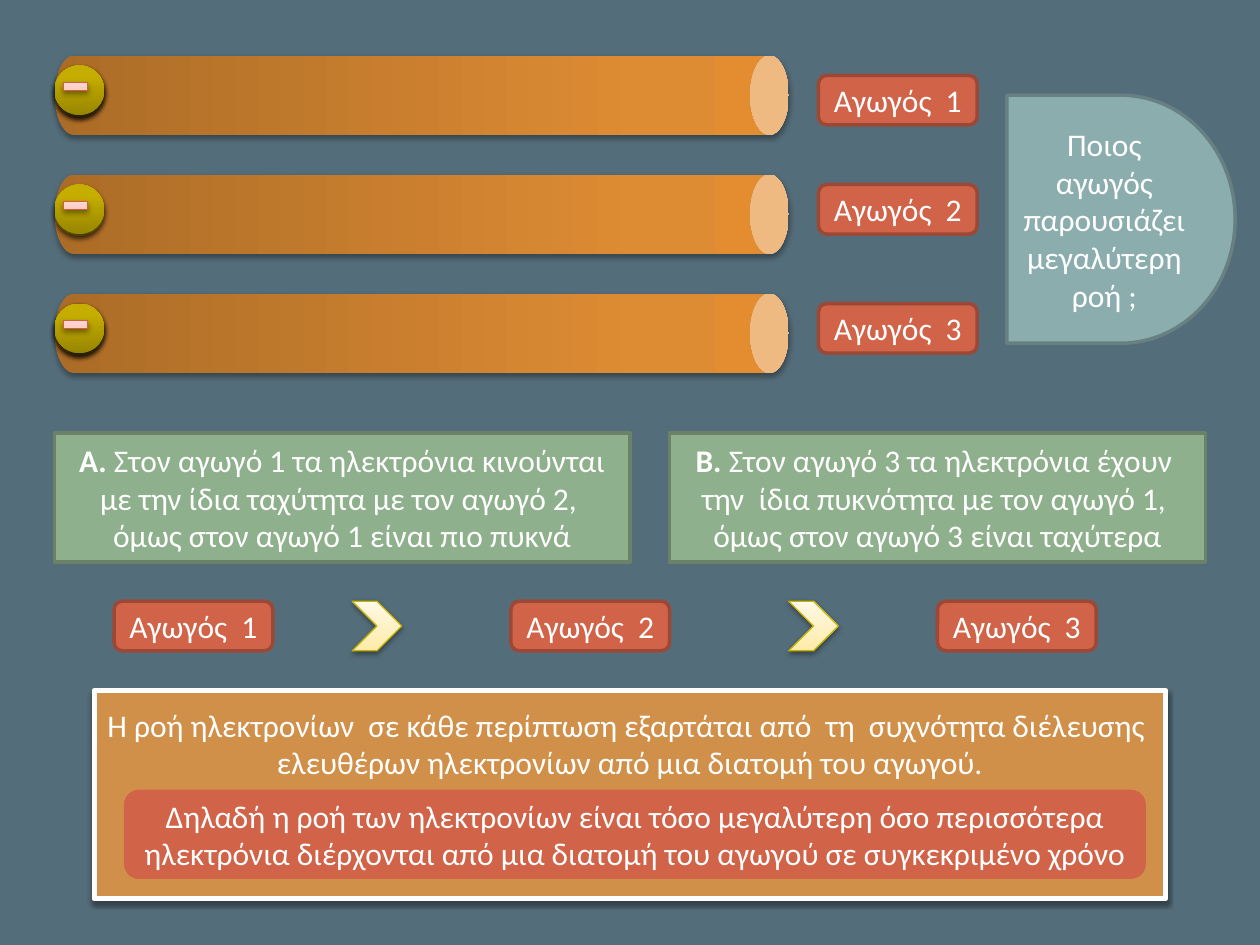
from dataclasses import dataclass
from typing import Optional

from lxml.etree import SubElement
from pptx import Presentation
from pptx.dml.color import RGBColor
from pptx.enum.shapes import MSO_SHAPE as Geometry
from pptx.enum.text import MSO_ANCHOR as Anchor, PP_ALIGN as Align
from pptx.oxml.ns import qn
from pptx.util import Inches, Pt

COLUMNS, ROWS = 25.4, 19.05
SLIDE_WIDTH, SLIDE_HEIGHT = Inches(10), Inches(7.5)
ROW_PITCH = 2.4
WHITE = "FFFFFF"


@dataclass(frozen=True)
class Cell:
    col: float
    row: float
    cols: float
    rows: float


@dataclass(frozen=True)
class Shadow:
    opacity: int
    distance: float


@dataclass(frozen=True)
class Style:
    fill: Optional[str] = None
    stops: tuple[tuple[int, str], ...] = ()
    line: Optional[str] = None
    line_width: float = 2
    shadow: Optional[Shadow] = None


@dataclass(frozen=True)
class Conductor:
    name: str
    electrons: int
    label_row: float
    order_col: float


@dataclass(frozen=True)
class Statement:
    cell: Cell
    letter: str
    wording: str


DEEP, SOFT = Shadow(35, 1.8), Shadow(38, 1.6)
COPPER = Style(stops=((0, "AB6C27"), (80, "DE8C33"), (100, "E38D30")), shadow=DEEP)
ELECTRON = Style(stops=((0, "988600"), (80, "C6AE00"), (100, "C7AF00")), shadow=DEEP)
CHARGE = Style(stops=((0, "FFB5AC"), (35, "FFCAC4"), (100, "FFEBE8")),
               line="D05F44", line_width=0.75, shadow=SOFT)
ARROW = Style(stops=((0, "FFEBA5"), (35, "FFF0BF"), (100, "FFF9E7")),
              line="C8B000", line_width=0.75, shadow=SOFT)
LABEL = Style(fill="D16349", line="9B4936")
QUESTION = Style(fill="8CADAE", line="688081")
ANSWER = Style(fill="8FB08C", line="6A8268")
PANEL = Style(fill="D19049", line=WHITE, line_width=3, shadow=SOFT)
SUMMARY = Style(fill="D16349")

CONDUCTORS = (
    Conductor("Αγωγός  1", 5, 1.52, 2.3),
    Conductor("Αγωγός  2", 3, 3.72, 10.3),
    Conductor("Αγωγός  3", 5, 6.12, 18.9),
)
STATEMENTS = (
    Statement(Cell(1.1, 8.73, 11.6, 2.6), "Α.",
              " Στον αγωγό 1 τα ηλεκτρόνια κινούνται με την ίδια ταχύτητα "
              "με τον αγωγό 2,  όμως στον αγωγό 1 είναι πιο πυκνά"),
    Statement(Cell(13.5, 8.73, 10.8, 2.6), "Β.",
              " Στον αγωγό 3 τα ηλεκτρόνια έχουν  την  ίδια πυκνότητα "
              "με τον αγωγό 1,  όμως στον αγωγό 3 είναι ταχύτερα"),
)
ORDER_ROW = 12.12
ARROW_COLS = (7.1, 15.9)


def x(cols: float) -> int:
    return round(SLIDE_WIDTH * cols / COLUMNS)


def y(rows: float) -> int:
    return round(SLIDE_HEIGHT * rows / ROWS)


def paint(colour, hex_value: str) -> None:
    colour.rgb = RGBColor.from_string(hex_value)


def add_colour(parent, hex_value: str):
    return SubElement(parent, qn("a:srgbClr"), val=hex_value)


def apply_gradient(shape, stops: tuple[tuple[int, str], ...]) -> None:
    shape.fill.gradient()
    shape.fill.gradient_angle = 90
    stop_list = shape.element.spPr.find(qn("a:gradFill")).find(qn("a:gsLst"))
    for default_stop in list(stop_list):
        stop_list.remove(default_stop)
    for position, hex_value in stops:
        stop = SubElement(stop_list, qn("a:gs"), pos=str(position * 1000))
        add_colour(stop, hex_value)


def apply_shadow(shape, shadow: Shadow) -> None:
    effects = shape.element.spPr.find(qn("a:effectLst"))
    outer = SubElement(effects, qn("a:outerShdw"), blurRad=str(Pt(3.1)),
                       dist=str(Pt(shadow.distance)), dir="5400000", rotWithShape="0")
    SubElement(add_colour(outer, "000000"), qn("a:alpha"), val=str(shadow.opacity * 1000))


def draw(shapes, geometry: Geometry, cell: Cell, style: Style):
    shape = shapes.add_shape(geometry, x(cell.col), y(cell.row), x(cell.cols), y(cell.rows))
    shape.shadow.inherit = False
    if style.stops:
        apply_gradient(shape, style.stops)
    else:
        shape.fill.solid()
        paint(shape.fill.fore_color, style.fill)
    if style.line:
        paint(shape.line.color, style.line)
        shape.line.width = Pt(style.line_width)
    else:
        shape.line.fill.background()
    if style.shadow:
        apply_shadow(shape, style.shadow)
    return shape


def write(shape, wording: str, bold_lead: str = "", anchor: Anchor = Anchor.MIDDLE) -> None:
    frame = shape.text_frame
    frame.word_wrap = True
    frame.vertical_anchor = anchor
    paragraph = frame.paragraphs[0]
    paragraph.text = bold_lead or wording
    paragraph.alignment = Align.CENTER
    if bold_lead:
        paragraph.runs[0].font.bold = True
        paragraph.add_run().text = wording
    for run in paragraph.runs:
        run.font.name = "Calibri"
        run.font.size = Pt(18)
        paint(run.font.color, WHITE)


def draw_label(shapes, name: str, col: float, row: float) -> None:
    write(draw(shapes, Geometry.ROUNDED_RECTANGLE, Cell(col, row, 3.2, 1), LABEL), name)


def draw_electron(shapes, row: float) -> None:
    electron = shapes.add_group_shape().shapes
    draw(electron, Geometry.OVAL, Cell(1.1, row, 1, 1), ELECTRON)
    draw(electron, Geometry.MATH_MINUS, Cell(1.2, row + 0.1, 0.65, 0.65), CHARGE)


def draw_conductor(shapes, conductor: Conductor, row: float) -> None:
    length, thickness = 14.8, 1.6
    overhang = (length - thickness) / 2
    rod = draw(shapes, Geometry.CAN,
               Cell(1.1 + overhang, row - overhang, thickness, length), COPPER)
    rod.adjustments[0] = 0.487
    rod.rotation = 90
    for index in range(conductor.electrons):
        draw_electron(shapes, row + (0.2 if index else 0.24))


def main() -> None:
    deck = Presentation()
    deck.slide_width, deck.slide_height = SLIDE_WIDTH, SLIDE_HEIGHT
    slide = deck.slides.add_slide(deck.slide_layouts[6])
    slide.background.fill.solid()
    paint(slide.background.fill.fore_color, "546D7A")
    shapes = slide.shapes

    for index, conductor in enumerate(CONDUCTORS):
        draw_conductor(shapes, conductor, 1.12 + index * ROW_PITCH)
    for conductor in CONDUCTORS:
        draw_label(shapes, conductor.name, 16.5, conductor.label_row)
        draw_label(shapes, conductor.name, conductor.order_col, ORDER_ROW)

    question = draw(shapes, Geometry.FLOWCHART_DELAY, Cell(20.3, 1.92, 4.6, 5), QUESTION)
    write(question, "Ποιος αγωγός παρουσιάζει μεγαλύτερη ροή ;")

    for statement in STATEMENTS:
        answer = draw(shapes, Geometry.RECTANGLE, statement.cell, ANSWER)
        write(answer, statement.wording, bold_lead=statement.letter)
    for col in ARROW_COLS:
        draw(shapes, Geometry.CHEVRON, Cell(col, ORDER_ROW, 1, 1), ARROW)

    conclusion = draw(shapes, Geometry.RECTANGLE, Cell(1.9, 13.92, 21.6, 4.2), PANEL)
    write(conclusion, "Η ροή ηλεκτρονίων  σε κάθε περίπτωση εξαρτάται από  τη  συχνότητα "
          "διέλευσης  ελευθέρων ηλεκτρονίων από μια διατομή του αγωγού.", anchor=Anchor.TOP)
    conclusion.text_frame.margin_top = Inches(0.12)
    summary = draw(shapes, Geometry.ROUNDED_RECTANGLE, Cell(2.5, 15.92, 20.6, 1.8), SUMMARY)
    write(summary, "Δηλαδή η ροή των ηλεκτρονίων είναι τόσο μεγαλύτερη όσο περισσότερα "
          "ηλεκτρόνια διέρχονται από μια διατομή του αγωγού σε συγκεκριμένο χρόνο")

    deck.save("out.pptx")


if __name__ == "__main__":
    main()
